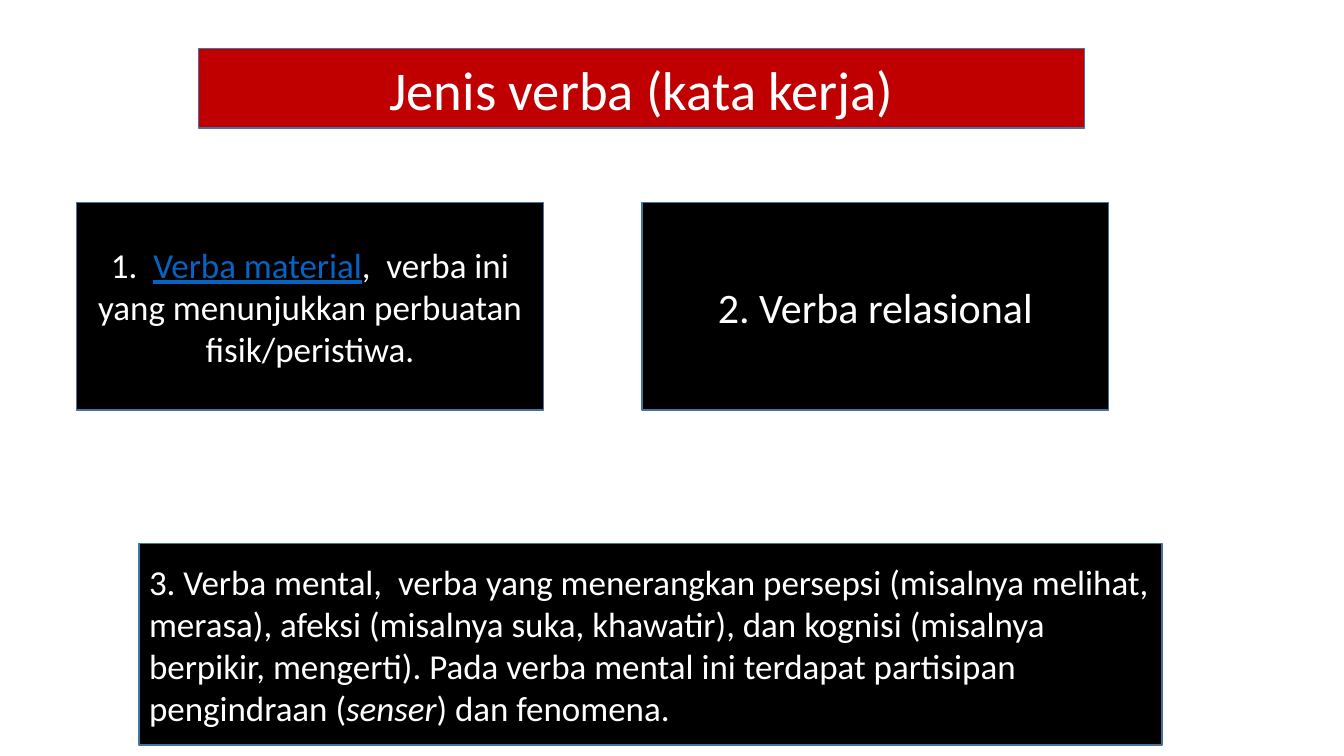
from pptx import Presentation
from pptx import util as u
from pptx.dml.color import RGBColor
from pptx.enum import shapes, text

COLORS = {
    "title": "C00000",
    "card": "000000",
    "border": "43739E",
    "text": "FFFFFF",
    "link": "0563C1",
}


def rgb(name):
    return RGBColor.from_string(COLORS[name])


def write(box, spans, size, fill="card", align=text.PP_ALIGN.CENTER):
    """Format a box and fill it with spans of (wording, font settings)."""
    box.fill.solid()
    box.fill.fore_color.rgb = rgb(fill)
    box.line.color.rgb = rgb("border")
    box.line.width = u.Pt(1)
    frame = box.text_frame
    frame.word_wrap = True
    frame.auto_size = text.MSO_AUTO_SIZE.NONE
    frame.vertical_anchor = text.MSO_ANCHOR.MIDDLE
    para = frame.paragraphs[0]
    para.alignment = align
    for wording, style in spans:
        span = para.add_run()
        span.text = wording
        span.font.name = "Calibri"
        span.font.size = u.Pt(size)
        span.font.color.rgb = rgb(style.get("color", "text"))
        span.font.underline = style.get("underline", False)
        span.font.italic = style.get("italic", False)


deck = Presentation()
deck.slide_width, deck.slide_height = u.Pt(960), u.Pt(540)
page = deck.slides.add_slide(deck.slide_layouts[5])

title = page.shapes.title
title.left, title.top = u.Pt(141.84), u.Pt(34.56)
title.width, title.height = u.Pt(632.88), u.Pt(56.88)
write(title, [("Jenis verba (kata kerja)", {})], 39, fill="title")

material = [
    ("1.  ", {}),
    ("Verba material", {"color": "link", "underline": True}),
    (",  verba ini yang menunjukkan perbuatan fisik/peristiwa.", {}),
]
mental = [
    ("3. Verba mental,  verba yang menerangkan persepsi (misalnya melihat, "
     "merasa), afeksi (misalnya suka, khawatir), dan kognisi (misalnya "
     "berpikir, mengerti). Pada verba mental ini terdapat partisipan "
     "pengindraan (", {}),
    ("senser", {"italic": True}),
    (") dan fenomena.", {}),
]
relational = [("2. Verba relasional", {})]

cards = [
    ((54.72, 144.72, 333.36, 148.32), material, 25, text.PP_ALIGN.CENTER),
    ((99.36, 388.08, 730.8, 144), mental, 25, text.PP_ALIGN.LEFT),
    ((458.64, 144.72, 333.36, 148.32), relational, 30, text.PP_ALIGN.CENTER),
]
for place, spans, size, align in cards:
    card = page.shapes.add_shape(shapes.MSO_SHAPE.RECTANGLE, *map(u.Pt, place))
    card.shadow.inherit = False
    write(card, spans, size, align=align)

deck.save("out.pptx")
